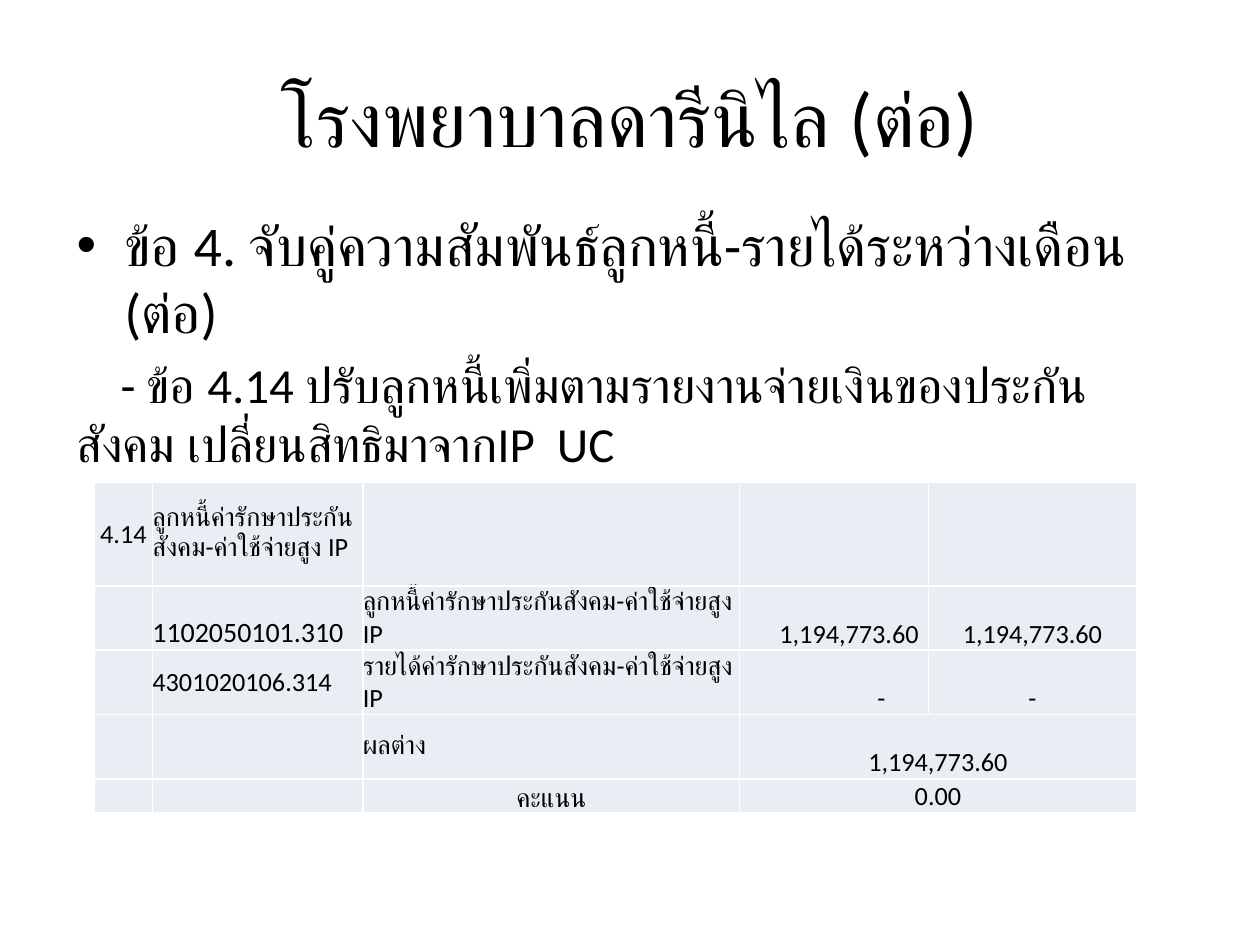
import pptx
import pptx.util
from lxml import etree
from pptx.dml.color import RGBColor
from pptx.enum.text import MSO_ANCHOR, PP_ALIGN
from pptx.oxml.ns import qn
from pptx.util import Inches

COLORS = {"text": "000000", "cell": "E9EDF4"}
FONT = "Calibri"
LEFT, CENTER = PP_ALIGN.LEFT, PP_ALIGN.CENTER
MIDDLE, BOTTOM = MSO_ANCHOR.MIDDLE, MSO_ANCHOR.BOTTOM


def write(paragraph, text, size, align):
    paragraph.alignment = align
    run = paragraph.add_run()
    run.text = text
    for name, value in {"name": FONT, "size": pptx.util.Pt(size)}.items():
        setattr(run.font, name, value)
    run.font.color.rgb = RGBColor.from_string(COLORS["text"])


def place(shape, left, top, width, height):
    box = {"left": left, "top": top, "width": width, "height": height}
    for name, value in box.items():
        setattr(shape, name, Inches(value))


deck = pptx.Presentation()
deck.slide_width, deck.slide_height = Inches(10), Inches(7.5)
slide = deck.slides.add_slide(deck.slide_layouts[5])

# Title
hospital = slide.shapes.title
place(hospital, 0.5, 0.3, 9, 1.25)
hospital.text_frame.vertical_anchor = MIDDLE
write(hospital.text_frame.paragraphs[0], "โรงพยาบาลดารีนิไล (ต่อ)", 44, CENTER)

# Account table: (row, column) -> text, size, alignment, anchor, left margin
entries = {
    (0, 0): ("4.14", 15, CENTER, MIDDLE, 0),
    (0, 1): ("ลูกหนี้ค่ารักษาประกันสังคม-ค่าใช้จ่ายสูง IP", 15, LEFT, MIDDLE, 0),
    (1, 1): ("1102050101.310", 16, LEFT, BOTTOM, 0),
    (1, 2): ("ลูกหนี้ค่ารักษาประกันสังคม-ค่าใช้จ่ายสูง IP", 15, LEFT, MIDDLE, 0),
    (1, 3): ("1,194,773.60", 15, CENTER, BOTTOM, 0.24),
    (1, 4): ("1,194,773.60", 15, CENTER, BOTTOM, 0),
    (2, 1): ("4301020106.314", 15, LEFT, MIDDLE, 0),
    (2, 2): ("รายได้ค่ารักษาประกันสังคม-ค่าใช้จ่ายสูง IP", 15, LEFT, MIDDLE, 0),
    (2, 3): ("-", 15, CENTER, BOTTOM, 0.75),
    (2, 4): ("-", 15, CENTER, BOTTOM, 0),
    (3, 2): ("ผลต่าง", 15, LEFT, MIDDLE, 0),
    (3, 3): ("1,194,773.60", 15, CENTER, BOTTOM, 0),
    (4, 2): ("คะแนน", 15, CENTER, BOTTOM, 0),
    (4, 3): ("0.00", 15, CENTER, BOTTOM, 0),
}
widths = [0.46, 1.67, 2.99, 1.5, 1.65]
heights = [0.82, 0.51, 0.51, 0.51, 0.27]
accounts = slide.shapes.add_table(
    len(heights), len(widths), Inches(0.75), Inches(3.83),
    Inches(sum(widths)), Inches(sum(heights))).table
accounts.first_row = accounts.horz_banding = False
for column, width in zip(accounts.columns, widths):
    column.width = Inches(width)
for row, height in zip(accounts.rows, heights):
    row.height = Inches(height)
for row in (3, 4):
    accounts.cell(row, 3).merge(accounts.cell(row, 4))

for row in range(len(heights)):
    for column in range(len(widths)):
        cell = accounts.cell(row, column)
        cell.fill.solid()
        cell.fill.fore_color.rgb = RGBColor.from_string(COLORS["cell"])
        for side in ("left", "right", "top", "bottom"):
            setattr(cell, f"margin_{side}", 0)
        paragraph = cell.text_frame.paragraphs[0]
        if (row, column) in entries:
            text, size, align, anchor, margin = entries[row, column]
            cell.vertical_anchor = anchor
            cell.margin_left = Inches(margin)
            write(paragraph, text, size, align)
        else:
            # Small end mark keeps empty cells from stretching the row
            etree.SubElement(paragraph._p, qn("a:endParaRPr"), sz="1200")

# Body: bulleted topic and its detail
body = slide.shapes.add_textbox(0, 0, 0, 0)
place(body, 0.51, 1.62, 9, 4.95)
body.text_frame.word_wrap = True
body.text_frame.margin_right = Inches(0.2)
topic = body.text_frame.paragraphs[0]
detail = body.text_frame.add_paragraph()
write(topic, "ข้อ 4. จับคู่ความสัมพันธ์ลูกหนี้-รายได้ระหว่างเดือน (ต่อ)", 32, LEFT)
write(detail, "- ข้อ 4.14 ปรับลูกหนี้เพิ่มตามรายงานจ่ายเงินของประกันสังคม "
      "เปลี่ยนสิทธิมาจากIP  UC", 28, LEFT)
for paragraph, margin, indent, space in ((topic, 0.38, -0.38, 6.4),
                                         (detail, 0, 0.35, 5.6)):
    paragraph.space_before = pptx.util.Pt(space)
    properties = paragraph._p.get_or_add_pPr()
    properties.set("marL", str(Inches(margin)))
    properties.set("indent", str(Inches(indent)))
bullet = topic._p.get_or_add_pPr()
etree.SubElement(bullet, qn("a:buFont"), typeface="Arial")
etree.SubElement(bullet, qn("a:buChar"), char="•")

deck.save("out.pptx")
